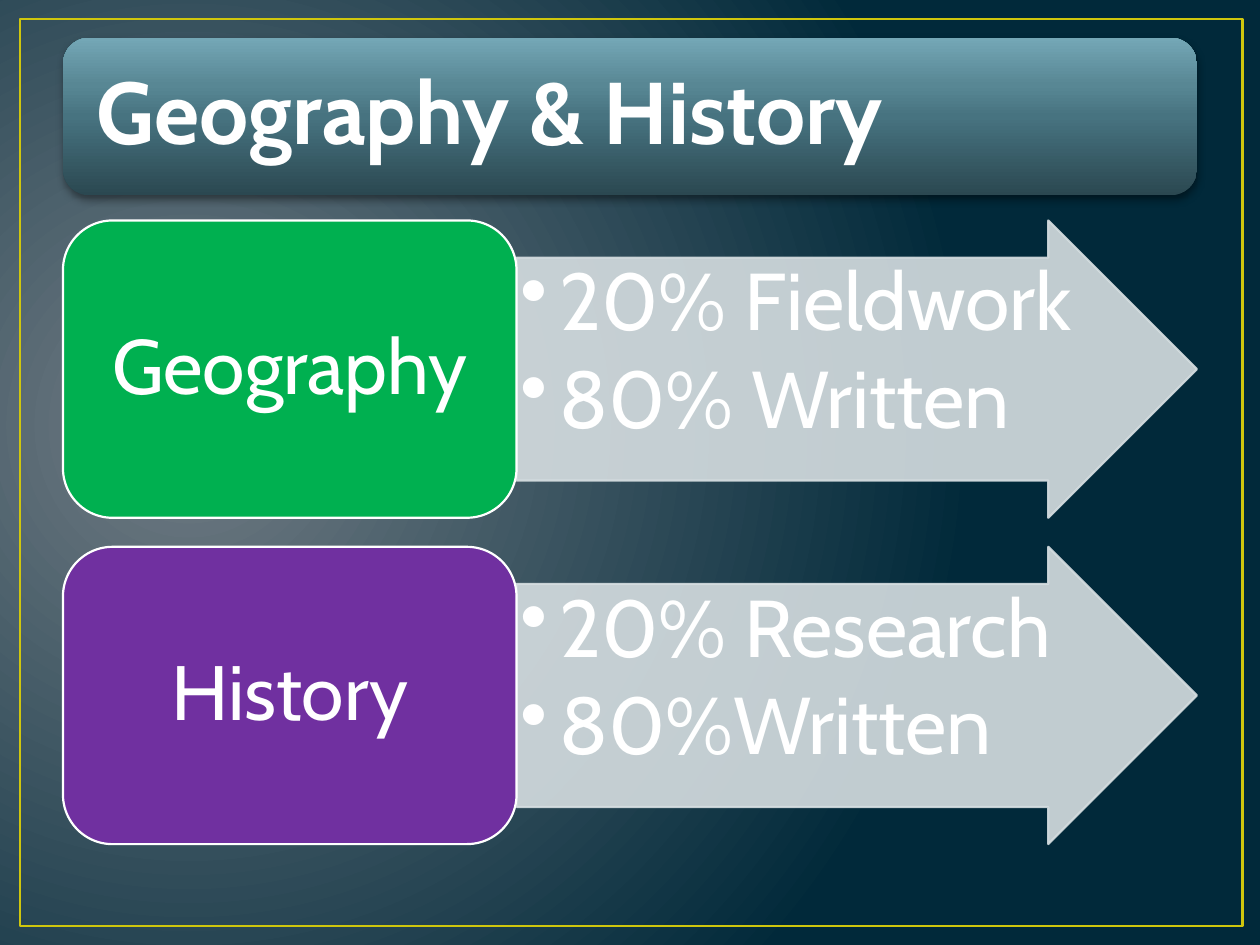
from dataclasses import dataclass

from lxml import etree
from pptx import Presentation
from pptx.dml.color import RGBColor
from pptx.enum.shapes import MSO_SHAPE
from pptx.enum.text import MSO_ANCHOR, PP_ALIGN
from pptx.oxml import parse_xml
from pptx.oxml.ns import nsdecls, qn
from pptx.util import Inches, Pt

RECT, ROUND = MSO_SHAPE.RECTANGLE, MSO_SHAPE.ROUNDED_RECTANGLE
ARROW = MSO_SHAPE.RIGHT_ARROW
LEFT, CENTER = PP_ALIGN.LEFT, PP_ALIGN.CENTER
TOP, MIDDLE = MSO_ANCHOR.TOP, MSO_ANCHOR.MIDDLE

COLORS = {"white": "FFFFFF", "frame": "CFC60D", "arrow": "D6DEE1",
          "green": "00B050", "purple": "7030A0", "shadow": "000000"}
BACKDROP = [(0, "717C84"), (100, "01293A")]
BANNER = [(0, "2B4851"), (50, "477380"), (70, "588794"), (100, "74A7B6")]
RADIAL = ('<a:path path="circle">'
          '<a:fillToRect l="15000" t="50000" r="85000" b="60000"/></a:path>')
UPWARD = '<a:lin ang="16200000" scaled="0"/>'
FONT = "Cabin"

WIDTH, HEIGHT = 10, 7.5
MARGIN = 0.05 * WIDTH
CONTENT = WIDTH - 2 * MARGIN
LABEL_W = 0.4 * CONTENT
ROW_TOP, ROW_H, ROW_PITCH = 1.75, 2.36, 2.59


@dataclass
class Subject:
    name: str
    color: str
    shares: list[str]


SUBJECTS = [Subject("Geography", "green", ["20% Fieldwork", "80% Written"]),
            Subject("History", "purple", ["20% Research", "80%Written"])]


def rgb(name: str) -> RGBColor:
    return RGBColor.from_string(COLORS[name])


def place(sp, x: float, y: float, w: float, h: float) -> None:
    sp.left, sp.top, sp.width, sp.height = map(Inches, (x, y, w, h))


def set_gradient(parent, stops: list[tuple[int, str]], direction: str) -> None:
    """Replace the solid fill inside parent with a gradient."""
    gs = "".join(f'<a:gs pos="{pos * 1000}"><a:srgbClr val="{color}"/></a:gs>'
                 for pos, color in stops)
    grad = parse_xml(f'<a:gradFill {nsdecls("a")} rotWithShape="1">'
                     f'<a:gsLst>{gs}</a:gsLst>{direction}</a:gradFill>')
    parent.replace(parent.find(qn("a:solidFill")), grad)


def set_alpha(sp, percent: int) -> None:
    """Make fill and line of a shape partly transparent."""
    for fill in sp._element.spPr.iter(qn("a:solidFill")):
        etree.SubElement(fill[0], qn("a:alpha"), val=str(percent * 1000))


def add_shape(slide, kind, x: float, y: float, w: float, h: float,
              fill: str | None = None, line: str | None = None, line_w: float = 1.25):
    sp = slide.shapes.add_shape(kind, *map(Inches, (x, y, w, h)))
    sp.shadow.inherit = False
    if fill:
        sp.fill.solid()
        sp.fill.fore_color.rgb = rgb(fill)
    else:
        sp.fill.background()
    if line:
        sp.line.color.rgb = rgb(line)
        sp.line.width = Pt(line_w)
    else:
        sp.line.fill.background()
    return sp


def set_text(sp, lines: list[str], size: float, bold: bool = False, align=LEFT,
             anchor=MIDDLE, insets: tuple[float, float] = (0.03, 0.03),
             after: float = 0, bullet: bool = False) -> None:
    tf = sp.text_frame
    tf.word_wrap = True
    tf.vertical_anchor = anchor
    tf.margin_left = tf.margin_right = Inches(insets[0])
    tf.margin_top = tf.margin_bottom = Inches(insets[1])
    for i, text in enumerate(lines):
        p = tf.add_paragraph() if i else tf.paragraphs[0]
        p.alignment, p.line_spacing = align, 0.9
        p.space_before, p.space_after = Pt(0), Pt(after)
        r = p.add_run()
        r.text = text
        r.font.name, r.font.size, r.font.bold = FONT, Pt(size), bold
        r.font.color.rgb = rgb("white")
        if bullet:
            pPr = p._p.get_or_add_pPr()
            pPr.set("marL", str(Inches(0.31)))
            pPr.set("indent", str(-Inches(0.31)))
            etree.SubElement(pPr, qn("a:buChar"), char="•")


def add_banner(slide, text: str) -> None:
    panel = add_shape(slide, ROUND, MARGIN, 0.3, CONTENT, 1.25, fill="shadow")
    spPr = panel._element.spPr
    set_gradient(spPr, BANNER, UPWARD)
    spPr.find(qn("a:effectLst")).append(parse_xml(
        f'<a:outerShdw {nsdecls("a")} blurRad="{Pt(5)}" dist="{Pt(2)}" dir="5400000" '
        f'rotWithShape="0"><a:srgbClr val="{COLORS["shadow"]}">'
        '<a:alpha val="43000"/></a:srgbClr></a:outerShdw>'))
    title = slide.shapes.title
    place(title, MARGIN + 0.06, 0.36, CONTENT - 0.12, 1.13)
    set_text(title, [text], 50, bold=True, insets=(0.21, 0.21))
    slide.shapes._spTree.append(title._element)  # in front of the panel


def add_subject(slide, subject: Subject, row: int) -> None:
    y = ROW_TOP + row * ROW_PITCH
    arrow = add_shape(slide, ARROW, MARGIN + LABEL_W, y, CONTENT - LABEL_W, ROW_H,
                      fill="arrow", line="arrow")
    arrow.adjustments[0], arrow.adjustments[1] = 0.75, 0.5
    set_alpha(arrow, 90)
    set_text(arrow, subject.shares, 46, anchor=TOP, after=6, bullet=True)
    label = add_shape(slide, ROUND, MARGIN, y, LABEL_W, ROW_H,
                      fill=subject.color, line="white")
    set_text(label, [subject.name], 44, align=CENTER, insets=(0.18, 0.09))


def main() -> None:
    prs = Presentation()
    prs.slide_width, prs.slide_height = Inches(WIDTH), Inches(HEIGHT)
    slide = prs.slides.add_slide(prs.slide_layouts[5])
    slide.background.fill.solid()
    slide.background.fill.fore_color.rgb = rgb("shadow")
    set_gradient(slide.element.find(".//" + qn("p:bgPr")), BACKDROP, RADIAL)
    add_shape(slide, RECT, 0.16, 0.15, 9.7, 7.2, line="frame", line_w=1.5)
    add_banner(slide, "Geography & History")
    for row, subject in enumerate(SUBJECTS):
        add_subject(slide, subject, row)
    prs.save("out.pptx")


if __name__ == "__main__":
    main()
